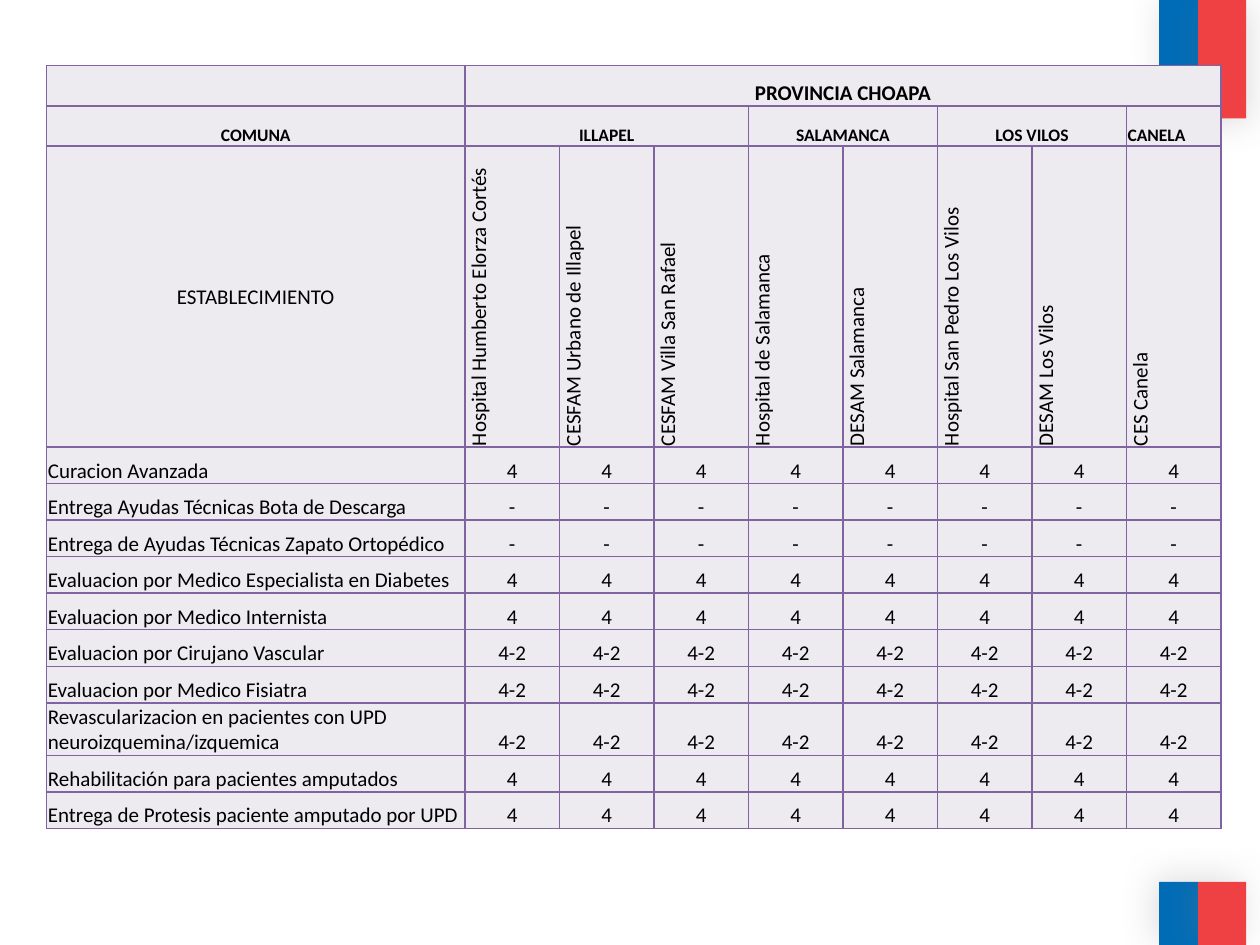
from lxml.etree import SubElement
from pptx import Presentation
from pptx.dml.color import RGBColor
from pptx.enum.shapes import MSO_SHAPE
from pptx.enum.text import MSO_ANCHOR, PP_ALIGN
from pptx.oxml.ns import qn
from pptx.util import Inches, Pt

FONT = "Calibri"
BLUE, RED, SHADOW = "006CB7", "EF4144", "808080"
LILAC, PURPLE, BLACK = "EDEAF0", "8064A2", "000000"

FLAG_BANDS = [
    (9.2, -0.01, 0.31, 0.95, BLUE, 45),
    (9.51, 0, 0.38, 0.94, RED, 45),
    (9.2, 7, 0.31, 0.5, BLUE, 215),
    (9.51, 7, 0.38, 0.5, RED, 215),
]
COMMUNES = [
    ("ILLAPEL", ["Hospital Humberto Elorza Cortés", "CESFAM Urbano de Illapel",
                 "CESFAM Villa San Rafael"]),
    ("SALAMANCA", ["Hospital de Salamanca", "DESAM Salamanca"]),
    ("LOS VILOS", ["Hospital San Pedro Los Vilos", "DESAM Los Vilos"]),
    ("CANELA", ["CES Canela"]),
]
SERVICES = [
    ("Curacion Avanzada", "4"),
    ("Entrega Ayudas Técnicas Bota de Descarga", "-"),
    ("Entrega de Ayudas Técnicas Zapato Ortopédico", "-"),
    ("Evaluacion por Medico Especialista en Diabetes", "4"),
    ("Evaluacion por Medico Internista", "4"),
    ("Evaluacion por Cirujano Vascular", "4-2"),
    ("Evaluacion por Medico Fisiatra", "4-2"),
    ("Revascularizacion en pacientes con UPD neuroizquemina/izquemica", "4-2"),
    ("Rehabilitación para pacientes amputados", "4"),
    ("Entrega de Protesis paciente amputado por UPD", "4"),
]
COL_WIDTHS = [3.32] + [0.75] * 8
ROW_HEIGHTS = [0.32, 0.32, 2.39] + [0.29] * 7 + [0.33] + [0.29] * 2


def rgb(color):
    return RGBColor.from_string(color)


def add_band(slide, left, top, width, height, color, angle):
    sp = slide.shapes.add_shape(MSO_SHAPE.RECTANGLE, Inches(left), Inches(top),
                                Inches(width), Inches(height))
    sp.fill.solid()
    sp.fill.fore_color.rgb = rgb(color)
    sp.line.fill.background()
    sp.shadow.inherit = False
    effects = sp._element.spPr.find(qn("a:effectLst"))
    shadow = SubElement(effects, qn("a:outerShdw"), blurRad=str(Pt(20)),
                        dist=str(Pt(3)), dir=str(angle * 60000), rotWithShape="0")
    clr = SubElement(shadow, qn("a:srgbClr"), val=SHADOW)
    SubElement(clr, qn("a:alpha"), val="25000")


def style_cell(cell):
    cell.margin_left = cell.margin_right = cell.margin_top = Inches(0.01)
    cell.margin_bottom = 0
    tcPr = cell._tc.get_or_add_tcPr()
    for side in ("a:lnL", "a:lnR", "a:lnT", "a:lnB"):
        ln = SubElement(tcPr, qn(side), w=str(Pt(1)))
        fill = SubElement(ln, qn("a:solidFill"))
        SubElement(fill, qn("a:srgbClr"), val=PURPLE)
    cell.fill.solid()
    cell.fill.fore_color.rgb = rgb(LILAC)


def write_cell(cell, text, size=12, bold=False, align=PP_ALIGN.CENTER,
               anchor=MSO_ANCHOR.BOTTOM, vertical=False):
    cell.vertical_anchor = anchor
    if vertical:
        cell._tc.get_or_add_tcPr().set("vert", "vert270")
    cell.text_frame.text = text
    p = cell.text_frame.paragraphs[0]
    p.alignment = align
    r = p.runs[0]
    r.font.name = FONT
    r.font.size = Pt(size)
    r.font.bold = bold
    r.font.color.rgb = rgb(BLACK)


def add_grid(slide):
    frame = slide.shapes.add_table(len(ROW_HEIGHTS), len(COL_WIDTHS), Inches(0.37),
                                   Inches(0.52), Inches(sum(COL_WIDTHS)),
                                   Inches(sum(ROW_HEIGHTS)))
    table = frame.table
    table.first_row = table.horz_banding = False
    for col, width in zip(table.columns, COL_WIDTHS):
        col.width = Inches(width)
    for row, height in zip(table.rows, ROW_HEIGHTS):
        row.height = Inches(height)
    for cell in table.iter_cells():
        style_cell(cell)
    return table


def fill_headers(table):
    last = len(COL_WIDTHS) - 1
    table.cell(0, 1).merge(table.cell(0, last))
    write_cell(table.cell(0, 1), "PROVINCIA CHOAPA", bold=True)
    write_cell(table.cell(1, 0), "COMUNA", size=10, bold=True)
    write_cell(table.cell(2, 0), "ESTABLECIMIENTO", anchor=MSO_ANCHOR.MIDDLE)
    col = 1
    for commune, centres in COMMUNES:
        head = table.cell(1, col)
        if len(centres) > 1:
            head.merge(table.cell(1, col + len(centres) - 1))
        align = PP_ALIGN.CENTER if len(centres) > 1 else PP_ALIGN.LEFT
        write_cell(head, commune, size=10, bold=True, align=align)
        for centre in centres:
            write_cell(table.cell(2, col), centre, align=PP_ALIGN.LEFT,
                       anchor=MSO_ANCHOR.MIDDLE, vertical=True)
            col += 1


def fill_services(table):
    for row, (service, value) in enumerate(SERVICES, start=3):
        write_cell(table.cell(row, 0), service, align=PP_ALIGN.LEFT)
        for col in range(1, len(COL_WIDTHS)):
            write_cell(table.cell(row, col), value)


def main():
    prs = Presentation()
    prs.slide_width, prs.slide_height = Inches(10), Inches(7.5)
    slide = prs.slides.add_slide(prs.slide_layouts[6])
    for band in FLAG_BANDS:
        add_band(slide, *band)
    table = add_grid(slide)
    fill_headers(table)
    fill_services(table)
    prs.save("out.pptx")


if __name__ == "__main__":
    main()
